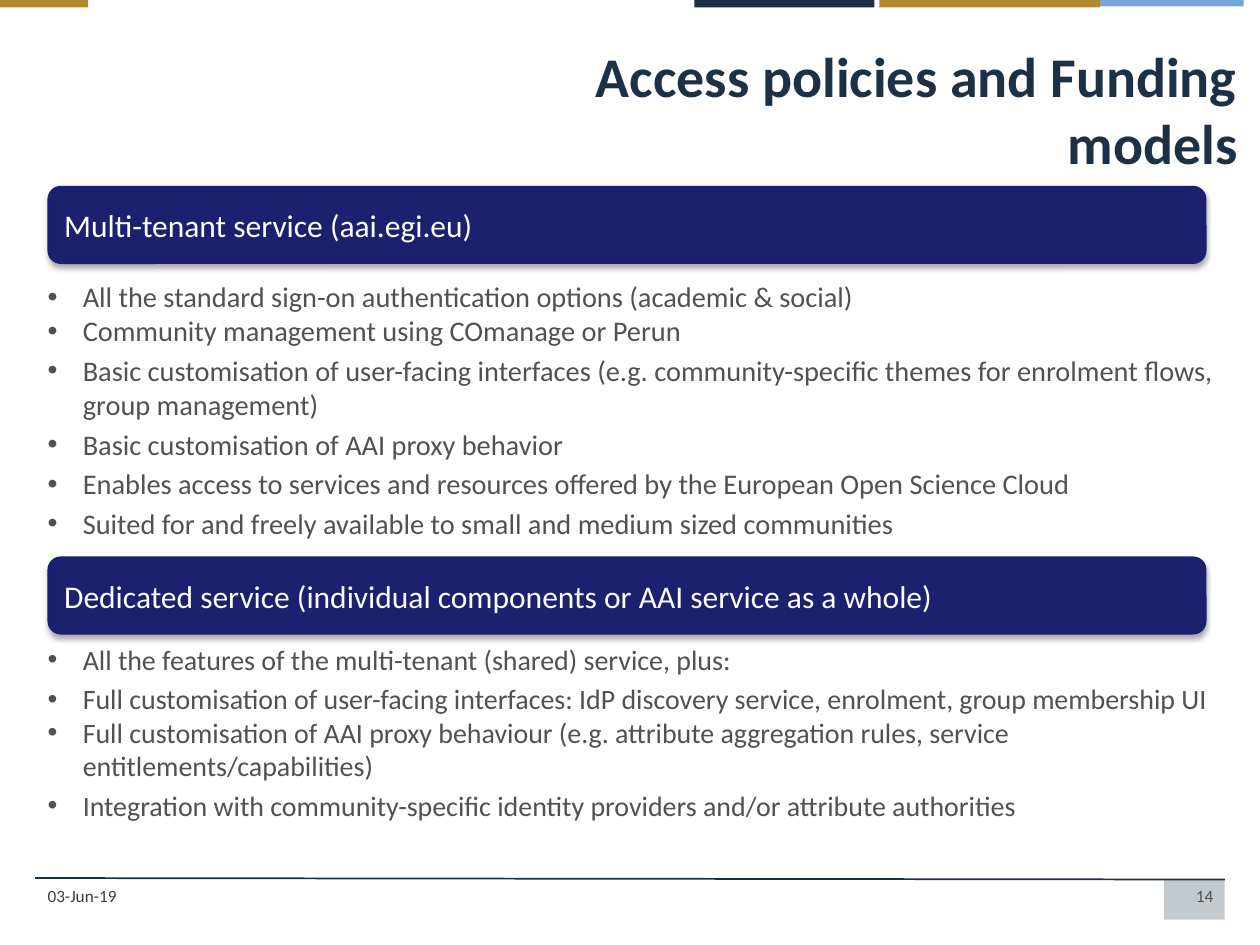
from lxml import etree
from pptx import Presentation
from pptx import util as u
from pptx.dml import color
from pptx.enum import shapes, text
from pptx.oxml import ns

FONT = "Calibri"
COLORS = {
    "navy": "1C3046",
    "rule": "1D2F45",
    "sky": "75A5D8",
    "gold": "B5892D",
    "header": "1B216E",
    "header_edge": "181F6E",
    "body": "515151",
    "date": "3D3D3D",
    "white": "FFFFFF",
    "shadow": "000000",
}
GAP = u.Pt(3.2)

TENANT_POINTS = [
    ("All the standard sign-on authentication options (academic & social)", 0, 0),
    ("Community management using COmanage or Perun", 0, GAP),
    ("Basic customisation of user-facing interfaces (e.g. community-specific themes "
     "for enrolment flows, group management)", 0, GAP),
    ("Basic customisation of AAI proxy behavior", 0, GAP),
    ("Enables access to services and resources offered by the European Open Science Cloud", 0, GAP),
    ("Suited for and freely available to small and medium sized communities", 0, GAP),
]
DEDICATED_POINTS = [
    ("All the features of the multi-tenant (shared) service, plus:", 0, 0),
    ("Full customisation of user-facing interfaces: IdP discovery service, enrolment, "
     "group membership UI", GAP, 0),
    ("Full customisation of AAI proxy behaviour (e.g. attribute aggregation rules, "
     "service entitlements/capabilities)", 0, GAP),
    ("Integration with community-specific identity providers and/or attribute authorities", 0, GAP),
]


def rgb(name):
    return color.RGBColor.from_string(COLORS[name])


def cm(*lengths):
    return [u.Cm(length) for length in lengths]


def sub(parent, tag, **attributes):
    return etree.SubElement(parent, ns.qn(tag), attributes)


def set_font(paragraph, size, color_name, bold=False):
    font = paragraph.font
    font.name, font.size, font.bold = FONT, u.Pt(size), bold
    font.color.rgb = rgb(color_name)


def add_block(slide, kind, box, fill):
    block = slide.shapes.add_shape(kind, *cm(*box))
    block.shadow.inherit = False
    block.fill.solid()
    block.fill.fore_color.rgb = rgb(fill)
    block.line.fill.background()
    return block


def add_label(slide, box, words, color_name, align):
    label = slide.shapes.add_textbox(*cm(*box)).text_frame
    label.word_wrap = True
    line = label.paragraphs[0]
    line.text, line.alignment = words, align
    set_font(line, 9.8, color_name)


def add_top_band(slide, left, top):
    for offset, width, height, fill in [
        (14, 3.63, 0.15, "navy"),
        (21.89, 3.18, 0.13, "sky"),
        (17.73, 4.45, 0.15, "gold"),
        (0, 1.78, 0.15, "gold"),
    ]:
        add_block(slide, shapes.MSO_SHAPE.RECTANGLE, (left + offset, top, width, height), fill)


def add_footer(slide, left, top, width):
    right = left + width
    rule = slide.shapes.add_connector(
        shapes.MSO_CONNECTOR.STRAIGHT, *cm(right, top, left, top - 0.03))
    rule.line.color.rgb = rgb("rule")
    rule.line.width = u.Pt(1)
    sub(rule._element.spPr, "a:effectLst")
    page_tab = add_block(
        slide, shapes.MSO_SHAPE.RECTANGLE, (right - 1.22, top, 1.22, 0.81), "rule")
    tint = page_tab._element.spPr.find(ns.qn("a:solidFill"))[0]
    sub(tint, "a:alpha", val="26000")
    add_label(slide, (right - 6.48, top, 6.5, 0.79), "14", "body", text.PP_ALIGN.RIGHT)
    add_label(slide, (left, top, 5.92, 0.79), "03-Jun-19", "date", text.PP_ALIGN.LEFT)


def add_title(slide, left, top, width, height):
    title = slide.shapes.title
    title.left, title.top, title.width, title.height = cm(left, top, width, height)
    frame = title.text_frame
    frame.auto_size = text.MSO_AUTO_SIZE.NONE
    frame.vertical_anchor = text.MSO_ANCHOR.TOP
    frame.margin_right = u.Cm(0.45)
    heading = frame.paragraphs[0]
    heading.text = "Access policies and Funding models"
    heading.alignment = text.PP_ALIGN.RIGHT
    set_font(heading, 32, "navy", bold=True)


def add_header(slide, left, top, width, words):
    header = add_block(
        slide, shapes.MSO_SHAPE.ROUNDED_RECTANGLE, (left, top, width, 1.55), "header")
    header.line.color.rgb = rgb("header_edge")
    header.line.width = u.Pt(0.75)
    effects = header._element.spPr.find(ns.qn("a:effectLst"))
    shadow = sub(effects, "a:outerShdw", blurRad=str(u.Pt(3.1)), dist=str(u.Pt(1.8)),
                 dir="5400000", rotWithShape="0")
    sub(sub(shadow, "a:srgbClr", val=COLORS["shadow"]), "a:alpha", val="35000")
    frame = header.text_frame
    frame.word_wrap = True
    frame.vertical_anchor = text.MSO_ANCHOR.MIDDLE
    frame.margin_left = frame.margin_right = u.Cm(0.25)
    frame.margin_top = frame.margin_bottom = u.Cm(0.25)
    heading = frame.paragraphs[0]
    heading.text, heading.alignment = words, text.PP_ALIGN.LEFT
    set_font(heading, 18, "white")


def add_points(slide, left, top, width, height, points, size):
    frame = slide.shapes.add_textbox(*cm(left, top, width, height)).text_frame
    frame.word_wrap = True
    for index, (words, before, after) in enumerate(points):
        point = frame.add_paragraph() if index else frame.paragraphs[0]
        point.text = words
        point.space_before, point.space_after = u.Pt(0) + before, u.Pt(0) + after
        properties = point._p.get_or_add_pPr()
        properties.set("marL", str(u.Cm(0.71)))
        properties.set("indent", str(-u.Cm(0.71)))
        sub(properties, "a:buFont", typeface="Arial")
        sub(properties, "a:buChar", char="•")
        set_font(point, size, "body")


def add_service(slide, left, top, width, header, points, points_offset, points_height, size):
    add_points(slide, left, top + points_offset, width, points_height, points, size)
    add_header(slide, left + 0.26, top, width - 0.66, header)


def main():
    deck = Presentation()
    deck.slide_width, deck.slide_height = cm(25.4, 19.05)
    slide = deck.slides.add_slide(deck.slide_layouts[5])
    add_footer(slide, 0.71, 17.73, 23.98)
    add_top_band(slide, 0, 0)
    add_title(slide, 8.08, 0.71, 17.32, 2.39)
    add_service(slide, 0.71, 3.76, 24, "Multi-tenant service (aai.egi.eu)",
                TENANT_POINTS, 1.75, 5.41, 16.2)
    add_service(slide, 0.71, 11.23, 24,
                "Dedicated service (individual components or AAI service as a whole)",
                DEDICATED_POINTS, 1.6, 4.9, 16)
    deck.save("out.pptx")


if __name__ == "__main__":
    main()
